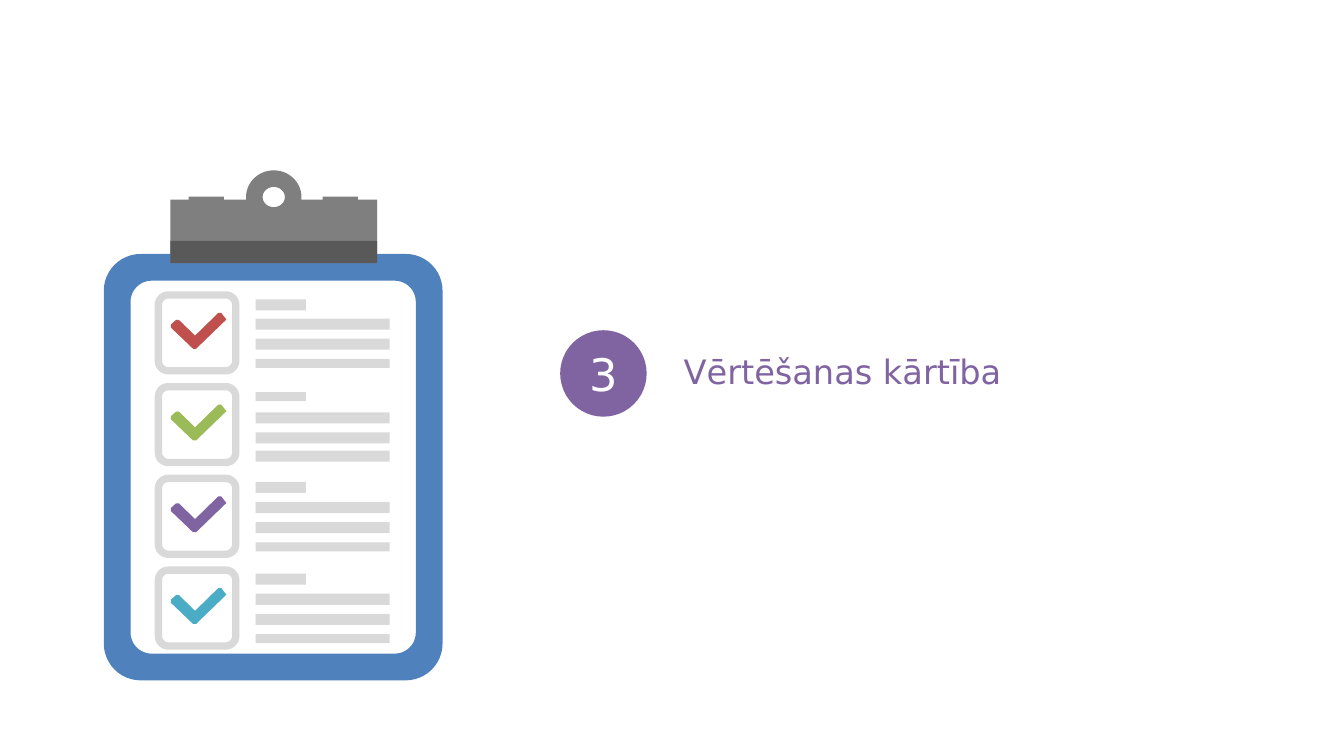
from math import cos, pi, sin

from pptx import Presentation
from pptx.dml.color import RGBColor
from pptx.enum.shapes import MSO_SHAPE as Preset
from pptx.enum.text import MSO_ANCHOR as Anchor, MSO_AUTO_SIZE as AutoSize, PP_ALIGN as Align
from pptx.util import Inches, Pt

# The slide is a grid of 1333 columns by 750 rows
COLUMNS, ROWS = 1333, 750
CELL = Inches(0.01)
FONT = "DejaVu Sans"

WHITE = RGBColor(0xFF, 0xFF, 0xFF)
BLUE = RGBColor(0x4F, 0x81, 0xBD)
RED = RGBColor(0xC0, 0x50, 0x4D)
GREEN = RGBColor(0x9B, 0xBB, 0x59)
PURPLE = RGBColor(0x80, 0x64, 0xA2)
TEAL = RGBColor(0x4B, 0xAC, 0xC6)
METAL = RGBColor(0x7F, 0x7F, 0x7F)
DARK_METAL = RGBColor(0x59, 0x59, 0x59)
PALE = RGBColor(0xD9, 0xD9, 0xD9)

# Check colour, then top and height of the text bars within each row
CHECK_ROWS = [
    (RED, [(8, 11), (27, 11), (47, 11), (67, 9)]),
    (GREEN, [(9, 9), (29, 11), (49, 11), (67, 11)]),
    (PURPLE, [(7, 11), (27, 11), (47, 11), (67, 9)]),
    (TEAL, [(7, 11), (27, 11), (47, 11), (67, 9)]),
]
ROW_PITCH = 91
CHECK_MARK = [(71, 28), (66, 21.5), (63, 21.5), (40, 44), (24, 28.5), (21, 28.5),
              (16, 33), (16, 36), (38, 57), (41, 57), (70, 29)]


def paint(shape, color):
    shape.shadow.inherit = False
    shape.fill.solid()
    shape.fill.fore_color.rgb = color
    shape.line.fill.background()
    return shape


def add_preset(slide, preset, left, top, width, height, color):
    box = [round(n * CELL) for n in (left, top, width, height)]
    return paint(slide.shapes.add_shape(preset, *box), color)


def add_outline(slide, contours, color):
    """Fill one or more closed contours given in grid cells."""
    scaled = [[(round(x * CELL), round(y * CELL)) for x, y in c] for c in contours]
    builder = slide.shapes.build_freeform(*scaled[0][0], scale=1.0)
    for index, points in enumerate(scaled):
        if index:
            builder.move_to(*points[0])
        builder.add_line_segments(points[1:], close=True)
    return paint(builder.convert_to_shape(), color)


def arc(x, y, radius, start, sweep, steps=12):
    angles = [start + sweep * i / steps for i in range(steps + 1)]
    return [(x + radius * cos(a), y + radius * sin(a)) for a in angles]


def rounded(left, top, width, height, radius):
    right, bottom = left + width - radius, top + height - radius
    left, top = left + radius, top + radius
    corners = [(right, bottom), (left, bottom), (left, top), (right, top)]
    return [point for i, (x, y) in enumerate(corners)
            for point in arc(x, y, radius, i * pi / 2, pi / 2)]


def add_frame(slide, left, top, width, height, band, outer_radius, inner_radius, color):
    outer = rounded(left, top, width, height, outer_radius)
    inner = rounded(left + band, top + band, width - 2 * band, height - 2 * band, inner_radius)
    add_outline(slide, [outer, inner[::-1]], color)


def add_clip(slide, left, top, width):
    middle = left + width / 2
    # Body with a half-round notch, then the dark lip
    body_top, body_bottom = top + 29, top + 92
    notch = arc(middle, body_top, 15, 0, pi)
    add_outline(slide, [notch + [(left, body_top), (left, body_bottom),
                                 (left + width, body_bottom), (left + width, body_top)]], METAL)
    add_preset(slide, Preset.RECTANGLE, left, top + 75, width, 17, DARK_METAL)
    # Hanging ring
    ring = add_preset(slide, Preset.DONUT, middle - 27.5, top, 55, 53, METAL)
    ring.adjustments[0] = 0.31
    # Upper edge of the lip and the two tabs
    add_preset(slide, Preset.RECTANGLE, left, top + 70, width, 5, DARK_METAL)
    for tab_left in (left + 18, left + width - 54):
        add_preset(slide, Preset.RECTANGLE, tab_left, top + 26, 35, 9, METAL)


def add_check_row(slide, left, top, color, bars):
    add_frame(slide, left, top, 84, 82.5, 7.25, 13.5, 6.5, PALE)
    for index, (bar_top, height) in enumerate(bars):
        width = 133 if index else 50
        add_preset(slide, Preset.RECTANGLE, left + 100, top + bar_top, width, height, PALE)
    add_outline(slide, [[(left + x, top + y) for x, y in CHECK_MARK]], color)


def add_clipboard(slide, left, top, width, height):
    add_frame(slide, left, top + 83, width, height - 83, 26.5, 36.5, 21, BLUE)
    add_clip(slide, left + 66, top, 205)
    for index, (color, bars) in enumerate(CHECK_ROWS):
        add_check_row(slide, left + 50.5, top + 120 + index * ROW_PITCH, color, bars)


def write(frame, text, size, color, align):
    frame.vertical_anchor = Anchor.MIDDLE
    paragraph = frame.paragraphs[0]
    paragraph.alignment = align
    run = paragraph.add_run()
    run.text = text
    run.font.name, run.font.size = FONT, Pt(size)
    run.font.color.rgb = color


def add_section_heading(slide, left, top, width, height, number, heading):
    # Numbered disc
    disc = add_preset(slide, Preset.OVAL, left, top, height, height, PURPLE)
    disc.line.color.rgb = PURPLE
    disc.line.width = Pt(2)
    write(disc.text_frame, number, 32, WHITE, Align.CENTER)
    # Section title
    title = slide.shapes.title
    title_left, title_height = left + 111, 50
    title.left, title.top = title_left * CELL, (top + 14) * CELL
    title.width, title.height = (left + width - title_left) * CELL, title_height * CELL
    title.text_frame.word_wrap = True
    title.text_frame.auto_size = AutoSize.NONE
    write(title.text_frame, heading, 24, PURPLE, Align.LEFT)


def main():
    deck = Presentation()
    deck.slide_width, deck.slide_height = COLUMNS * CELL, ROWS * CELL
    slide = deck.slides.add_slide(deck.slide_layouts[5])
    add_clipboard(slide, 103, 169, 336, 506)
    add_section_heading(slide, 557, 329, 767, 83, "3", "Vērtēšanas kārtība")
    deck.save("out.pptx")


if __name__ == "__main__":
    main()
